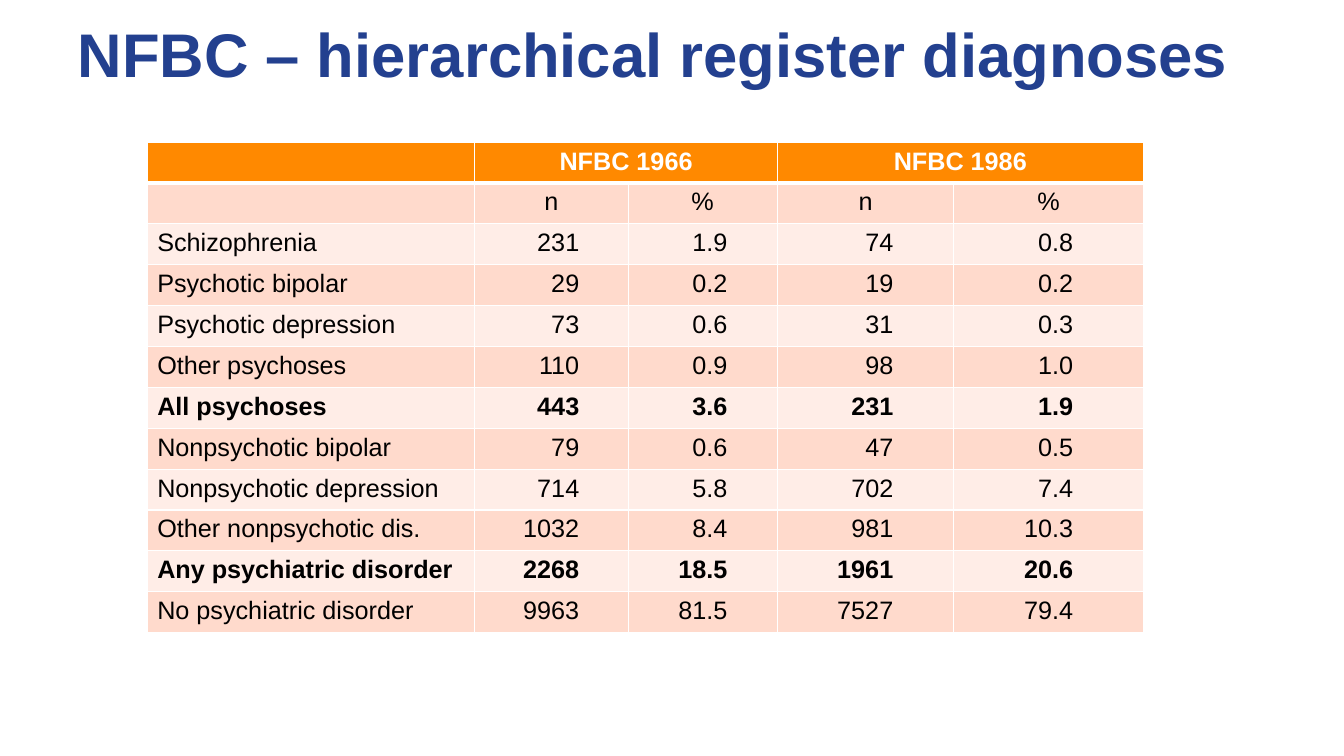
import pptx
import pptx.dml.color
import pptx.enum.text
import pptx.oxml
import pptx.oxml.ns
import pptx.util

Inches = pptx.util.Inches
Pt = pptx.util.Pt
ALIGN = pptx.enum.text.PP_ALIGN
ANCHOR = pptx.enum.text.MSO_ANCHOR

HUES = {
    "title": "23408F", "head": "FF8900", "dark": "FFDACC",
    "light": "FFEDE7", "white": "FFFFFF", "text": "000000",
}
FONT = "Arial"
WIDTHS = [3.25, 1.52, 1.48, 1.75, 1.88]
DIGITS = [0.55, 0.49]  # widest number in an n column and in a % column
ROWS = [
    ("", "NFBC 1966", "", "NFBC 1986", ""),
    ("", "n", "%", "n", "%"),
    ("Schizophrenia", "231", "1.9", "74", "0.8"),
    ("Psychotic bipolar", "29", "0.2", "19", "0.2"),
    ("Psychotic depression", "73", "0.6", "31", "0.3"),
    ("Other psychoses", "110", "0.9", "98", "1.0"),
    ("All psychoses", "443", "3.6", "231", "1.9"),
    ("Nonpsychotic bipolar", "79", "0.6", "47", "0.5"),
    ("Nonpsychotic depression", "714", "5.8", "702", "7.4"),
    ("Other nonpsychotic dis.", "1032", "8.4", "981", "10.3"),
    ("Any psychiatric disorder", "2268", "18.5", "1961", "20.6"),
    ("No psychiatric disorder", "9963", "81.5", "7527", "79.4"),
]
TOTALS = ("All psychoses", "Any psychiatric disorder")


def hue(name):
    return pptx.dml.color.RGBColor.from_string(HUES[name])


def add_run(para, text, size, color, bold):
    run = para.add_run()
    run.text = text
    run.font.name = FONT
    run.font.size = Pt(size)
    run.font.bold = bold
    run.font.color.rgb = hue(color)


def add_title(slide, left, top, width, height):
    title = slide.shapes.title
    title.left, title.top = Inches(left), Inches(top)
    title.width, title.height = Inches(width), Inches(height)
    title.fill.solid()
    title.fill.fore_color.rgb = hue("white")
    frame = title.text_frame
    frame.word_wrap = True
    frame.auto_size = pptx.enum.text.MSO_AUTO_SIZE.NONE
    frame.vertical_anchor = ANCHOR.TOP
    frame.margin_top = Inches(0.1)
    frame.margin_right = Inches(0.15)
    para = frame.paragraphs[0]
    para.alignment = ALIGN.CENTER
    para.line_spacing = 0.9
    add_run(para, "NFBC – hierarchical register diagnoses", 44, "title", True)


def add_edges(cell, row):
    """White cell borders, thick between the header and the body."""
    space = pptx.oxml.ns.nsdecls("a")
    props = cell._tc.get_or_add_tcPr()
    for side in "LRTB":
        thick = (row, side) in ((0, "B"), (1, "T"))
        props.append(pptx.oxml.parse_xml(
            f'<a:ln{side} {space} w="{Pt(3 if thick else 1)}"><a:solidFill>'
            f'<a:srgbClr val="{HUES["white"]}"/></a:solidFill></a:ln{side}>'))


def fill_cell(cell, row, col, text):
    add_edges(cell, row)
    band = "head" if row == 0 else "dark" if row % 2 else "light"
    cell.fill.solid()
    cell.fill.fore_color.rgb = hue(band)
    para = cell.text_frame.paragraphs[0]
    if col and row < 2:
        para.alignment = ALIGN.CENTER
    elif col:
        # Right-align the digits within a block centred in the column
        para.alignment = ALIGN.RIGHT
        gap = (WIDTHS[col] - DIGITS[(col - 1) % 2]) / 2
        cell.margin_right = Inches(gap)
    if text:
        bold = row == 0 or ROWS[row][0] in TOTALS
        add_run(para, text, 18, "text" if row else "white", bold)


def add_grid(slide, left, top, width, height):
    frame = slide.shapes.add_table(
        len(ROWS), len(WIDTHS), Inches(left), Inches(top),
        Inches(width), Inches(height))
    table = frame.table
    table.horz_banding = False
    for col, size in enumerate(WIDTHS):
        table.columns[col].width = Inches(size)
    for line in table.rows:
        line.height = int(Inches(height) / len(ROWS))
    for row, texts in enumerate(ROWS):
        for col, text in enumerate(texts):
            fill_cell(table.cell(row, col), row, col, text)
    # Each cohort heading spans its n and % columns
    for col in (1, 3):
        table.cell(0, col).merge(table.cell(0, col + 1))


def main():
    deck = pptx.Presentation()
    deck.slide_width, deck.slide_height = Inches(13.33), Inches(7.5)
    slide = deck.slides.add_slide(deck.slide_layouts[5])
    slide.background.fill.solid()
    slide.background.fill.fore_color.rgb = hue("white")
    add_title(slide, 0.19, 0.14, 12.63, 2.53)
    add_grid(slide, 1.46, 1.41, sum(WIDTHS), 4.87)
    deck.save("out.pptx")


if __name__ == "__main__":
    main()
